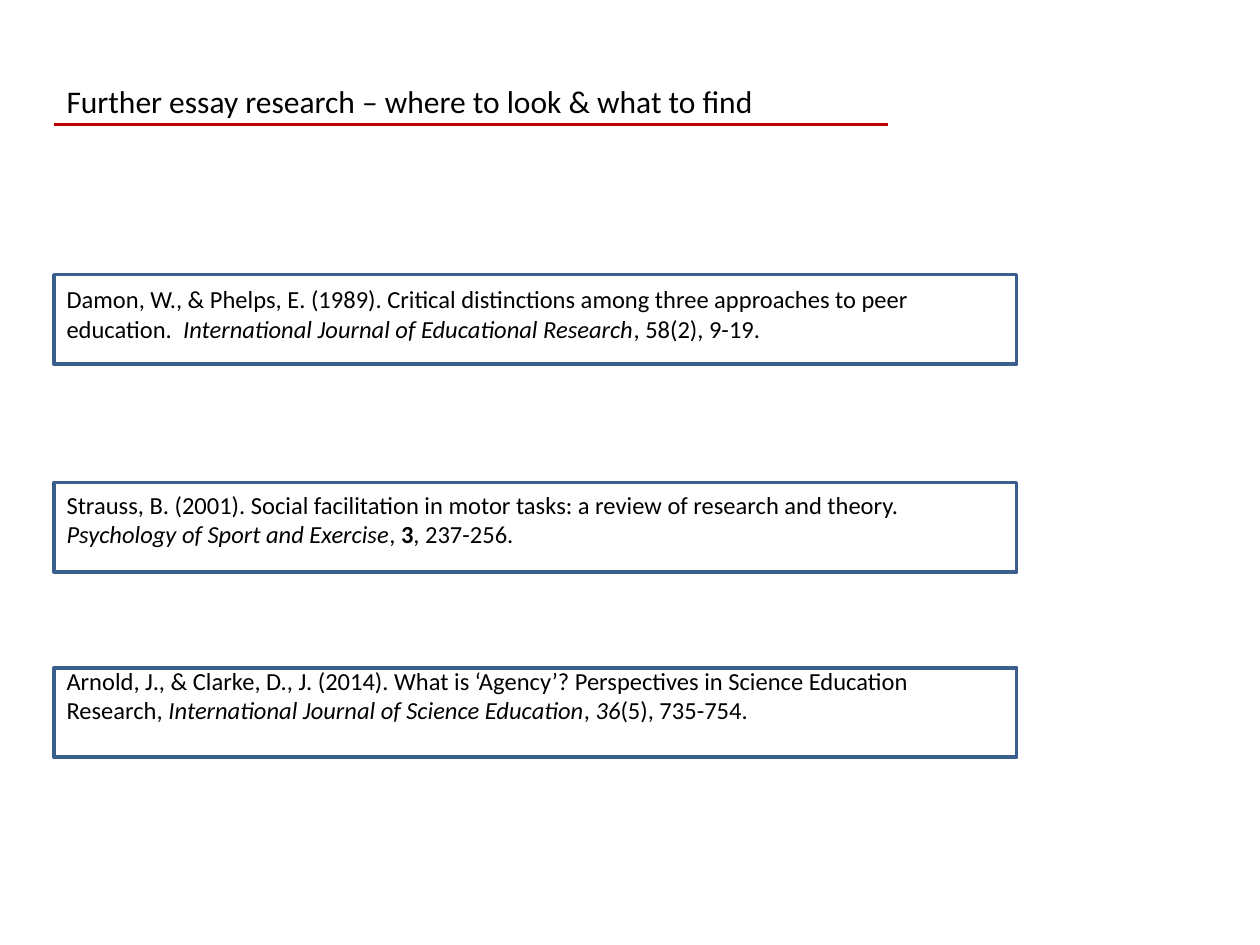
"""Build a slide listing further essay reading under a ruled heading."""

from dataclasses import dataclass

from lxml.etree import SubElement
from pptx import Presentation
from pptx.dml.color import RGBColor
from pptx.enum.shapes import MSO_CONNECTOR, MSO_SHAPE
from pptx.enum.text import MSO_AUTO_SIZE
from pptx.oxml.ns import qn
from pptx.slide import Slide
from pptx.util import Inches, Pt


@dataclass(frozen=True)
class Theme:
    font: str = "Calibri"
    ink: RGBColor = RGBColor(0x00, 0x00, 0x00)
    rule: RGBColor = RGBColor(0xC0, 0x00, 0x00)
    frame: RGBColor = RGBColor(0x3A, 0x5F, 0x8C)
    title_size: int = 18
    body_size: int = 14
    line_width: int = 2


@dataclass(frozen=True)
class Span:
    text: str
    italic: bool = False
    bold: bool = False


@dataclass(frozen=True)
class Entry:
    spans: tuple[Span, ...]
    size: int
    space_before: float = 0


THEME = Theme()
LEFT = 0.43
RULE_TOP = 0.99
RULE_WIDTH = 6.62
FRAME_TOPS = (2.18, 3.83, 5.3)
FRAME_WIDTH, FRAME_HEIGHT = 7.64, 0.71

ENTRIES = (
    Entry((Span("Further essay research – where to look & what to find"),), THEME.title_size),
    Entry(
        (
            Span(
                "Damon, W., & Phelps, E. (1989). Critical distinctions among "
                "three approaches to peer education.  "
            ),
            Span("International Journal of Educational Research", italic=True),
            Span(", 58(2), 9-19."),
        ),
        THEME.body_size,
        94,
    ),
    Entry(
        (
            Span(
                "Strauss, B. (2001). Social facilitation in motor tasks: "
                "a review of research and theory. "
            ),
            Span("Psychology of Sport and Exercise", italic=True),
            Span(", "),
            Span("3", bold=True),
            Span(", 237-256."),
        ),
        THEME.body_size,
        84,
    ),
    Entry(
        (
            Span(
                "Arnold, J., & Clarke, D., J. (2014). What is ‘Agency’? "
                "Perspectives in Science Education Research, "
            ),
            Span("International Journal of Science Education", italic=True),
            Span(", "),
            Span("36", italic=True),
            Span("(5), 735-754."),
        ),
        THEME.body_size,
        67,
    ),
)


def add_reading_list(page: Slide, entries: tuple[Entry, ...]) -> None:
    box = page.shapes.add_textbox(Inches(LEFT), Inches(0.6), Inches(7.4), Inches(5.49))
    frame = box.text_frame
    frame.word_wrap = True
    frame.auto_size = MSO_AUTO_SIZE.SHAPE_TO_FIT_TEXT
    for index, entry in enumerate(entries):
        para = frame.add_paragraph() if index else frame.paragraphs[0]
        para.space_before = Pt(entry.space_before)
        for span in entry.spans:
            run = para.add_run()
            run.text = span.text
            formats = {
                "name": THEME.font,
                "size": Pt(entry.size),
                "italic": span.italic,
                "bold": span.bold,
            }
            for name, value in formats.items():
                setattr(run.font, name, value)
            run.font.color.rgb = THEME.ink


def add_rule(page: Slide) -> None:
    rule = page.shapes.add_connector(
        MSO_CONNECTOR.STRAIGHT,
        Inches(LEFT),
        Inches(RULE_TOP),
        Inches(LEFT + RULE_WIDTH),
        Inches(RULE_TOP),
    )
    rule.line.color.rgb = THEME.rule
    rule.line.width = Pt(THEME.line_width)
    SubElement(rule.element.spPr, qn("a:effectLst"))


def add_frame(page: Slide, top: float) -> None:
    box = page.shapes.add_shape(
        MSO_SHAPE.RECTANGLE,
        Inches(LEFT),
        Inches(top),
        Inches(FRAME_WIDTH),
        Inches(FRAME_HEIGHT),
    )
    box.shadow.inherit = False
    box.fill.background()
    box.line.color.rgb = THEME.frame
    box.line.width = Pt(THEME.line_width)


def main() -> None:
    deck = Presentation()
    deck.slide_width, deck.slide_height = Inches(10), Inches(7.5)
    page = deck.slides.add_slide(deck.slide_layouts[6])
    add_reading_list(page, ENTRIES)
    add_rule(page)
    for top in FRAME_TOPS:
        add_frame(page, top)
    deck.save("out.pptx")


if __name__ == "__main__":
    main()
